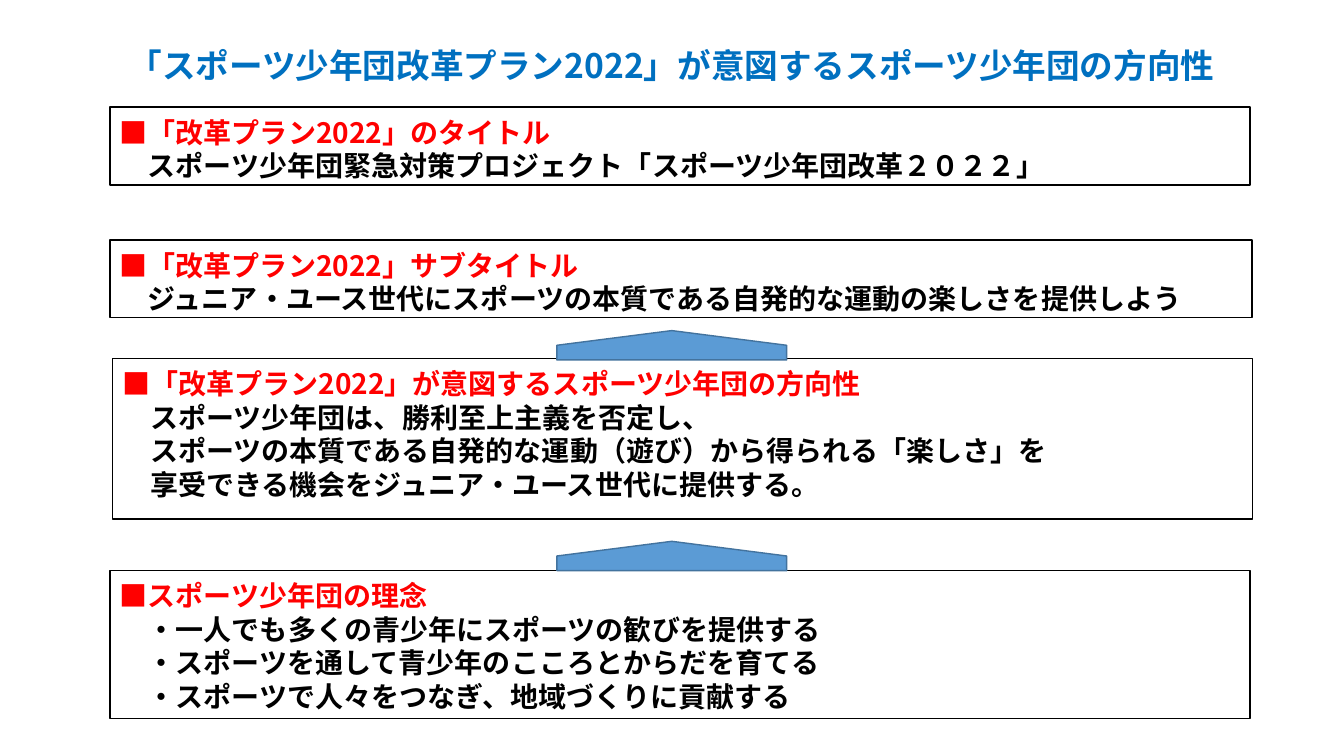
import pptx
import pptx.dml.color
import pptx.enum.shapes
import pptx.enum.text
import pptx.oxml.ns
import pptx.util
from pptx.util import Cm

RGBColor = pptx.dml.color.RGBColor
TITLE_BLUE = RGBColor(0x00, 0x70, 0xC0)
HEADING_RED = RGBColor(0xFF, 0x00, 0x00)
BLACK = RGBColor(0x00, 0x00, 0x00)
WHITE = RGBColor(0xFF, 0xFF, 0xFF)
ARROW_BLUE = RGBColor(0x5B, 0x9B, 0xD5)
ARROW_EDGE = RGBColor(0x43, 0x73, 0x9E)

FONT = "Noto Sans CJK JP"
BODY_SIZE = pptx.util.Pt(20)
LINE_PITCH = pptx.util.Pt(24)
ARROW_CENTER = 16.93
ARROW_LENGTH = 0.74
ARROW_BREADTH = 5.79

TITLE = "「スポーツ少年団改革プラン2022」が意図するスポーツ少年団の方向性"

# left, top, width, height in centimetres, then heading and lines
SECTIONS = [
    (2.77, 2.7, 28.73, 1.96, "■「改革プラン2022」のタイトル",
     ["スポーツ少年団緊急対策プロジェクト「スポーツ少年団改革２０２２」"]),
    (2.77, 6.05, 28.78, 1.96, "■「改革プラン2022」サブタイトル",
     ["ジュニア・ユース世代にスポーツの本質である自発的な運動の楽しさを提供しよう"]),
    (2.83, 9.04, 28.73, 4.04, "■「改革プラン2022」が意図するスポーツ少年団の方向性",
     ["スポーツ少年団は、勝利至上主義を否定し、",
      "スポーツの本質である自発的な運動（遊び）から得られる「楽しさ」を",
      "享受できる機会をジュニア・ユース世代に提供する。"]),
    (2.77, 14.38, 28.73, 3.73, "■スポーツ少年団の理念",
     ["・一人でも多くの青少年にスポーツの歓びを提供する",
      "・スポーツを通して青少年のこころとからだを育てる",
      "・スポーツで人々をつなぎ、地域づくりに貢献する"]),
]
ARROW_BOTTOMS = [9.07, 14.38]


def apply_format(target, values):
    for name, value in values.items():
        setattr(target, name, value)


def write_run(paragraph, text, size, color):
    run = paragraph.add_run()
    run.text = text
    apply_format(run.font, {"name": FONT, "size": size, "bold": True})
    run.font.color.rgb = color
    properties = run.font._element
    east_asian = properties.makeelement(pptx.oxml.ns.qn("a:ea"), {"typeface": FONT})
    properties.find(pptx.oxml.ns.qn("a:latin")).addnext(east_asian)


def add_filled_shape(slide, kind, box, fill, edge):
    shape = slide.shapes.add_shape(kind, *(Cm(length) for length in box))
    shape.shadow.inherit = False
    shape.fill.solid()
    shape.fill.fore_color.rgb = fill
    shape.line.color.rgb = edge
    shape.line.width = pptx.util.Pt(1)
    return shape


def format_title(slide):
    title = slide.shapes.title
    apply_format(title, {"left": Cm(2.29), "top": Cm(1.04),
                         "width": Cm(29.26), "height": Cm(1.35)})
    apply_format(title.text_frame, {
        "word_wrap": True,
        "auto_size": pptx.enum.text.MSO_AUTO_SIZE.NONE,
        "vertical_anchor": pptx.enum.text.MSO_ANCHOR.MIDDLE,
    })
    paragraph = title.text_frame.paragraphs[0]
    apply_format(paragraph, {"alignment": pptx.enum.text.PP_ALIGN.CENTER,
                             "line_spacing": 0.9})
    write_run(paragraph, TITLE, pptx.util.Pt(24), TITLE_BLUE)


def add_section(slide, left, top, width, height, heading, lines):
    """Add a framed box with a red heading over indented black lines."""
    shape = add_filled_shape(slide, pptx.enum.shapes.MSO_SHAPE.RECTANGLE,
                             (left, top, width, height), WHITE, BLACK)
    frame = shape.text_frame
    apply_format(frame, {"word_wrap": True, "margin_top": Cm(0.2),
                         "vertical_anchor": pptx.enum.text.MSO_ANCHOR.TOP})
    for index, text in enumerate([heading, *lines]):
        paragraph = frame.add_paragraph() if index else frame.paragraphs[0]
        apply_format(paragraph, {"alignment": pptx.enum.text.PP_ALIGN.LEFT,
                                 "line_spacing": LINE_PITCH})
        if index:
            # one full-width character of indent
            paragraph._p.get_or_add_pPr().set("marL", str(BODY_SIZE))
        write_run(paragraph, text, BODY_SIZE, BLACK if index else HEADING_RED)


def add_up_arrow(slide, bottom):
    """Add an upward pentagon whose base rests at the given height."""
    center = bottom - ARROW_LENGTH / 2
    box = (ARROW_CENTER - ARROW_LENGTH / 2, center - ARROW_BREADTH / 2,
           ARROW_LENGTH, ARROW_BREADTH)
    arrow = add_filled_shape(slide, pptx.enum.shapes.MSO_SHAPE.PENTAGON,
                             box, ARROW_BLUE, ARROW_EDGE)
    arrow.rotation = 270


def main():
    presentation = pptx.Presentation()
    apply_format(presentation, {"slide_width": Cm(33.87), "slide_height": Cm(19.05)})
    slide = presentation.slides.add_slide(presentation.slide_layouts[5])
    format_title(slide)
    for section in SECTIONS:
        add_section(slide, *section)
    for bottom in ARROW_BOTTOMS:
        add_up_arrow(slide, bottom)
    presentation.save("out.pptx")


if __name__ == "__main__":
    main()
